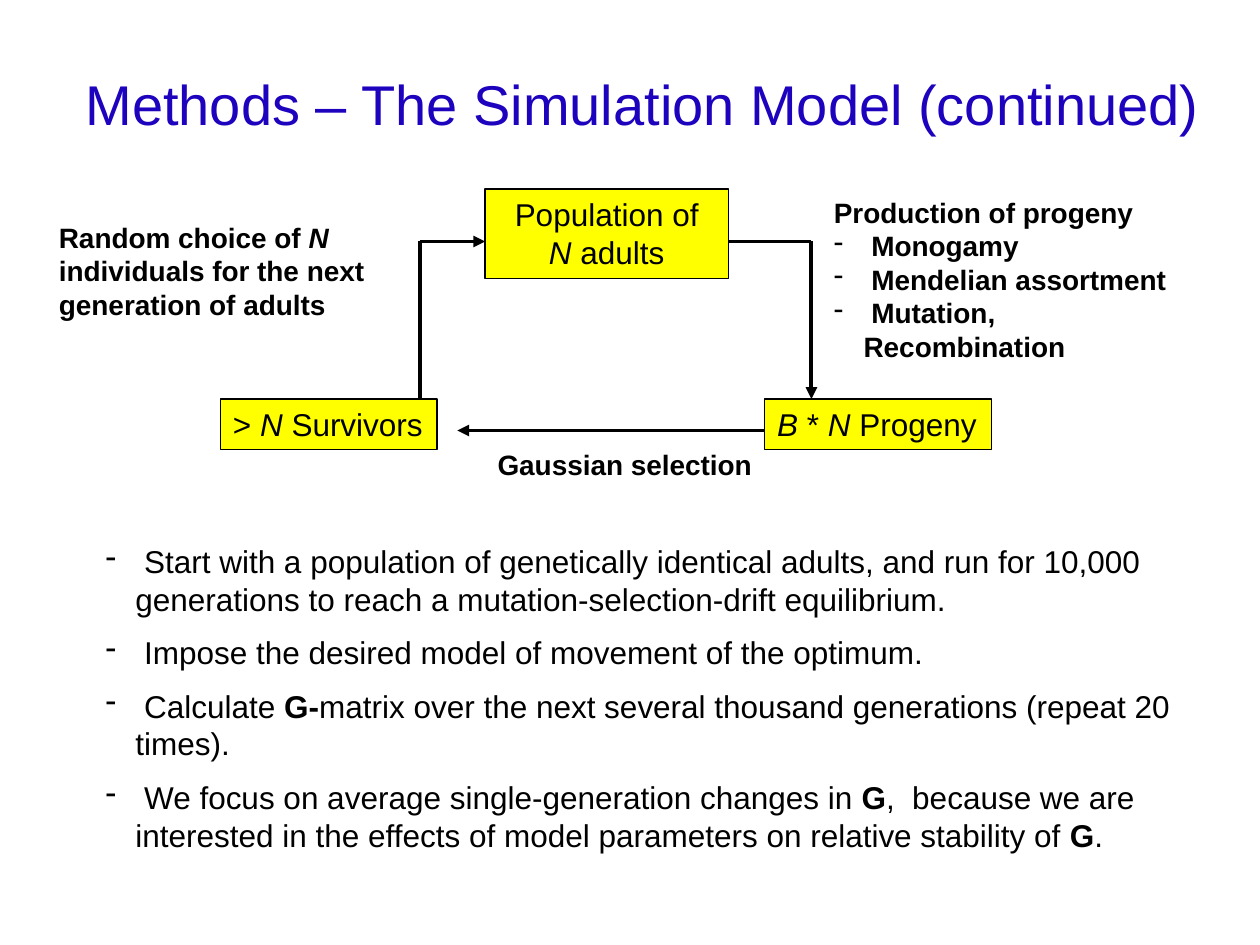
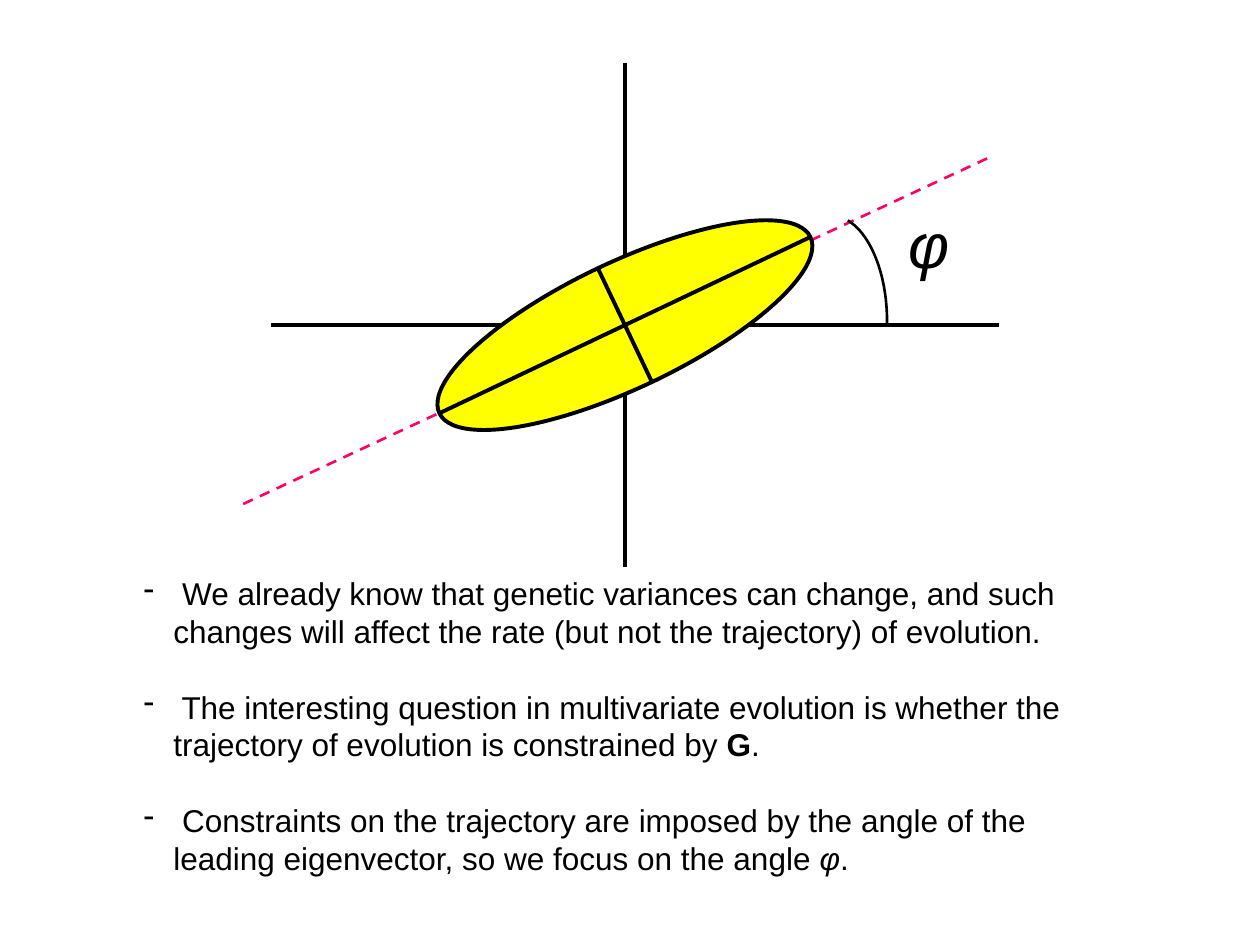
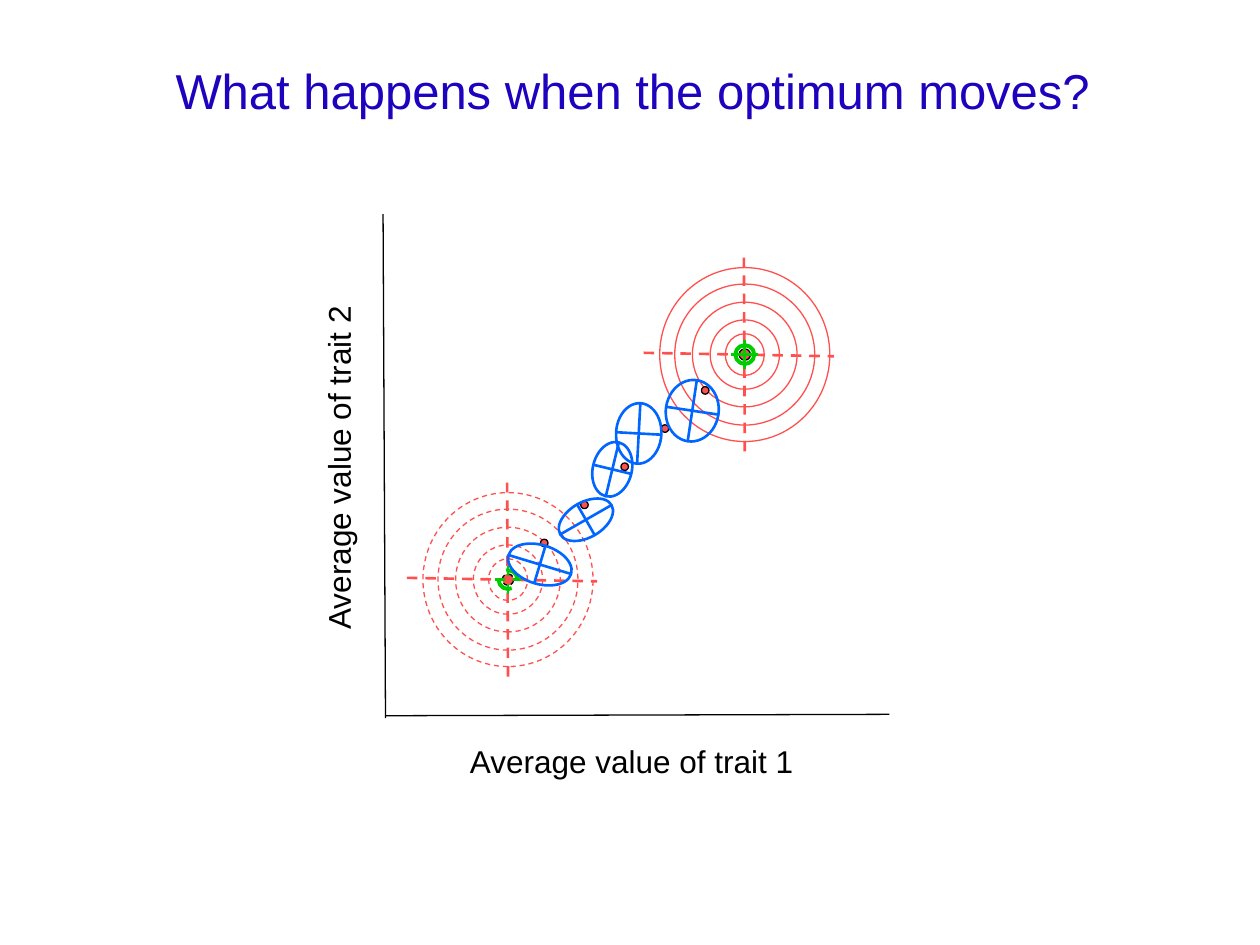
from math import cos, radians, sin

from lxml.etree import SubElement
from pptx import Presentation
from pptx.dml.color import RGBColor
from pptx.enum.dml import MSO_LINE_DASH_STYLE as Dash
from pptx.enum.shapes import MSO_CONNECTOR_TYPE as Link, MSO_SHAPE as Preset
from pptx.enum.text import MSO_ANCHOR as Anchor, MSO_AUTO_SIZE as Fit, PP_ALIGN as Align
from pptx.oxml.ns import qn
from pptx.util import Pt

COLORS = {
    "black": "000000", "title": "1D02BE", "yellow": "FFFF00", "pink": "FF0066",
    "red": "FF5050", "green": "00CC00", "blue": "0066FF",
}
FONT = "Arial"
BULLET_INDENT = 17


def color(name):
    """Return the named colour."""
    return RGBColor.from_string(COLORS[name])


def apply(target, values):
    """Set every attribute in a dict of format values."""
    for name, value in values.items():
        setattr(target, name, value)


def style_line(line, ink, weight, dash=None):
    """Set the colour, weight and dash of an outline."""
    line.color.rgb = color(ink)
    apply(line, {"width": Pt(weight), "dash_style": dash})


def add_spans(para, text, size, ink, bold):
    """Write text in which _x_ is italic and ^x^ is bold."""
    for i, part in enumerate(text.split("^")):
        for j, piece in enumerate(part.split("_")):
            if piece:
                span = para.add_run()
                span.text = piece
                apply(span.font, {"name": FONT, "size": Pt(size),
                                  "bold": bold or i % 2 == 1, "italic": j % 2 == 1})
                span.font.color.rgb = color(ink)


def add_bullet(para):
    """Give a paragraph a dash bullet with a hanging indent."""
    props = para._p.get_or_add_pPr()
    props.set("marL", str(Pt(BULLET_INDENT)))
    props.set("indent", str(-Pt(BULLET_INDENT)))
    SubElement(props, qn("a:buChar")).set("char", "-")


def write(box, lines, size=18, ink="black", bold=False, wrap=False,
          align=Align.LEFT, gap=0, bullets_from=None):
    """Fill a shape with paragraphs, with bullets from the given index on."""
    frame = box.text_frame
    apply(frame, {"word_wrap": wrap, "auto_size": Fit.SHAPE_TO_FIT_TEXT,
                  "vertical_anchor": Anchor.TOP})
    for index, text in enumerate(lines):
        para = frame.add_paragraph() if index else frame.paragraphs[0]
        apply(para, {"alignment": align, "space_after": Pt(gap)})
        if bullets_from is not None and index >= bullets_from:
            add_bullet(para)
        add_spans(para, text, size, ink, bold)


def add_text(page, area, lines, rotation=0, **style):
    """Add a text box."""
    box = page.shapes.add_textbox(*map(Pt, area))
    box.rotation = rotation
    write(box, lines, **style)


def add_step(page, area, lines, **style):
    """Add a yellow box for a stage of the life cycle."""
    box = page.shapes.add_shape(Preset.RECTANGLE, *map(Pt, area))
    box.shadow.inherit = False
    box.fill.solid()
    box.fill.fore_color.rgb = color("yellow")
    style_line(box.line, "black", 0.75)
    write(box, lines, **style)


def add_line(page, start, end, ink="black", weight=2.25, dash=None, arrow=False):
    """Add a straight line, with an arrowhead at its end if asked."""
    line = page.shapes.add_connector(Link.STRAIGHT, *map(Pt, (*start, *end)))
    style_line(line.line, ink, weight, dash)
    props = line.element.spPr
    if arrow:
        SubElement(props.find(qn("a:ln")), qn("a:tailEnd")).set("type", "triangle")
    SubElement(props, qn("a:effectLst"))


def add_ellipse(page, center, size, ink, weight, rotation=0, fill=None, dash=None):
    """Add an ellipse around a centre."""
    (x, y), (width, height) = center, size
    oval = page.shapes.add_shape(Preset.OVAL, Pt(x - width / 2), Pt(y - height / 2),
                                 Pt(width), Pt(height))
    oval.shadow.inherit = False
    oval.rotation = rotation
    if fill:
        oval.fill.solid()
        oval.fill.fore_color.rgb = color(fill)
    else:
        oval.fill.background()
    style_line(oval.line, ink, weight, dash)


def add_matrix(page, center, size, rotation, ink, weight, fill=None):
    """Add a G-matrix ellipse with its two eigenvectors."""
    add_ellipse(page, center, size, ink, weight, rotation, fill)
    x, y = center
    for length, turn in zip(size, (0, 90)):
        angle = radians(rotation + turn)
        dx, dy = cos(angle) * length / 2, sin(angle) * length / 2
        add_line(page, (x - dx, y - dy), (x + dx, y + dy), ink, weight)


def add_arc(page, center, radii, first, last):
    """Add an elliptical arc between two angles in degrees."""
    (x, y), (rx, ry) = center, radii
    points = []
    for angle in range(first, last - 1, -2):
        turn = radians(angle)
        points.append((Pt(x + rx * cos(turn)), Pt(y - ry * sin(turn))))
    builder = page.shapes.build_freeform(*points[0], scale=1.0)
    builder.add_line_segments(points[1:], close=False)
    arc = builder.convert_to_shape()
    arc.shadow.inherit = False
    arc.fill.background()
    style_line(arc.line, "black", 1.5)


def add_target(page, center, dash=None):
    """Add the fitness contours around an optimum."""
    x, y = center
    add_line(page, (x, y + 55.4), (x - 0.5, y - 55.4), "red", 1.5, Dash.DASH)
    for size in ((23.8, 22.3), (39.6, 39.6), (59.8, 59.8), (80.6, 80), (99.4, 97.2)):
        add_ellipse(page, center, size, "red", 0.75, 270, dash=dash)
    add_line(page, (x - 57.8, y - 1), (x + 50.9, y + 1), "red", 1.5, Dash.DASH)
    add_ellipse(page, center, (6.5, 6.5), "black", 0.75, 270, "red", dash)
    add_ellipse(page, center, (10.8, 10.8), "green", 2.25, 270, dash=dash)
    add_line(page, (x, y + 8.5), (x, y - 8.5), "green", 1.5, dash)
    add_line(page, (x - 7.6, y), (x + 7.6, y), "green", 1.5, dash)


def build_methods(page):
    """Draw the life cycle of the simulation model."""
    add_text(page, (41.8, 36, 656, 46), ["Methods – The Simulation Model (continued)"],
             size=32, ink="title")
    add_step(page, (277.2, 108, 139, 51), ["Population of", "_N_ adults"],
             wrap=True, align=Align.CENTER)
    add_step(page, (437, 228, 129.6, 28.8), ["_B_ * _N_ Progeny"])
    add_step(page, (126, 228, 123.8, 28.8), ["> _N_ Survivors"])
    for start, end, arrow in (
        ((416.2, 138), (463.7, 138), False),
        ((463.7, 138), (463.7, 228), True),
        ((437, 246), (261.4, 246), True),
        ((239.8, 228), (239.8, 138), False),
        ((239.8, 138), (277.2, 138), True),
    ):
        add_line(page, start, end, arrow=arrow)
    add_text(page, (469.4, 108, 217.4, 85),
             ["Production of progeny", " Monogamy", " Mendelian assortment",
              " Mutation, Recombination"],
             size=16, bold=True, wrap=True, bullets_from=1)
    add_text(page, (277.2, 252, 162, 26.6), ["Gaussian selection"], size=16, bold=True)
    add_text(page, (26.6, 122.4, 191.5, 65.5),
             ["Random choice of _N_", "individuals for the next", "generation of adults"],
             size=16, bold=True)
    add_text(page, (53.3, 306, 624.2, 193), [
        " Start with a population of genetically identical adults, and run for 10,000 "
        "generations to reach a mutation-selection-drift equilibrium.",
        " Impose the desired model of movement of the optimum.",
        " Calculate ^G-^matrix over the next several thousand generations (repeat 20 times).",
        " We focus on average single-generation changes in ^G^,  because we are "
        "interested in the effects of model parameters on relative stability of ^G^.",
    ], wrap=True, gap=9, bullets_from=0)


def build_angle(page):
    """Draw the angle of the leading eigenvector."""
    add_line(page, (139, 288), (565.2, 90), "pink", 1.5, Dash.DASH)
    add_line(page, (357.1, 36), (357.1, 324))
    add_line(page, (154.8, 185.8), (571, 185.8))
    add_matrix(page, (357.1, 185.8), (234.7, 72), 334.6, "black", 2.25, "yellow")
    add_arc(page, (474.5, 183.6), (32.4, 60.6), 72, -2)
    add_text(page, (512, 113.8, 38.2, 51), ["_φ_"], size=36)
    add_text(page, (75, 324.7, 576, 181.4), [
        " We already know that genetic variances can change, and such changes will "
        "affect the rate (but not the trajectory) of evolution.",
        " The interesting question in multivariate evolution is whether the trajectory "
        "of evolution is constrained by ^G^.",
        " Constraints on the trajectory are imposed by the angle of the leading "
        "eigenvector, so we focus on the angle _φ_.",
    ], wrap=True, gap=21.5, bullets_from=0)


def build_optimum(page):
    """Draw the G-matrix following a moving optimum."""
    add_target(page, (290.3, 331.2), Dash.DASH)
    add_target(page, (425.6, 202.6))
    for step in range(5):
        add_ellipse(page, (311 + 23 * step, 310.3 - 21.8 * step), (4.3, 4.3),
                    "black", 0.75, fill="red")
    for center, size, rotation in (
        ((308.5, 322.6), (22.3, 37.4), 286.8),
        ((334.8, 297), (20.2, 33.8), 240.2),
        ((349.9, 268.2), (31.7, 22.3), 283.6),
        ((395.6, 234.7), (35.3, 30.2), 278.5),
        ((365, 247.7), (34.6, 25.9), 273.1),
    ):
        add_matrix(page, center, size, rotation, "blue", 1.5)
    add_line(page, (218.9, 122.4), (220.3, 410.4), weight=0.75)
    add_line(page, (220.3, 409), (508.3, 408.2), weight=0.75)
    add_text(page, (261.4, 420.5, 200.9, 28.8), ["Average value of trait 1"])
    add_text(page, (92.9, 252, 200.9, 28.8), ["Average value of trait 2"], rotation=270)
    add_text(page, (83.5, 31, 555.8, 41), ["What happens when the optimum moves?"],
             size=28, ink="title", wrap=True, align=Align.CENTER)


def main():
    """Build and save the deck."""
    deck = Presentation()
    apply(deck, {"slide_width": Pt(720), "slide_height": Pt(540)})
    for build in (build_methods, build_angle, build_optimum):
        build(deck.slides.add_slide(deck.slide_layouts[6]))
    deck.save("out.pptx")


if __name__ == "__main__":
    main()
